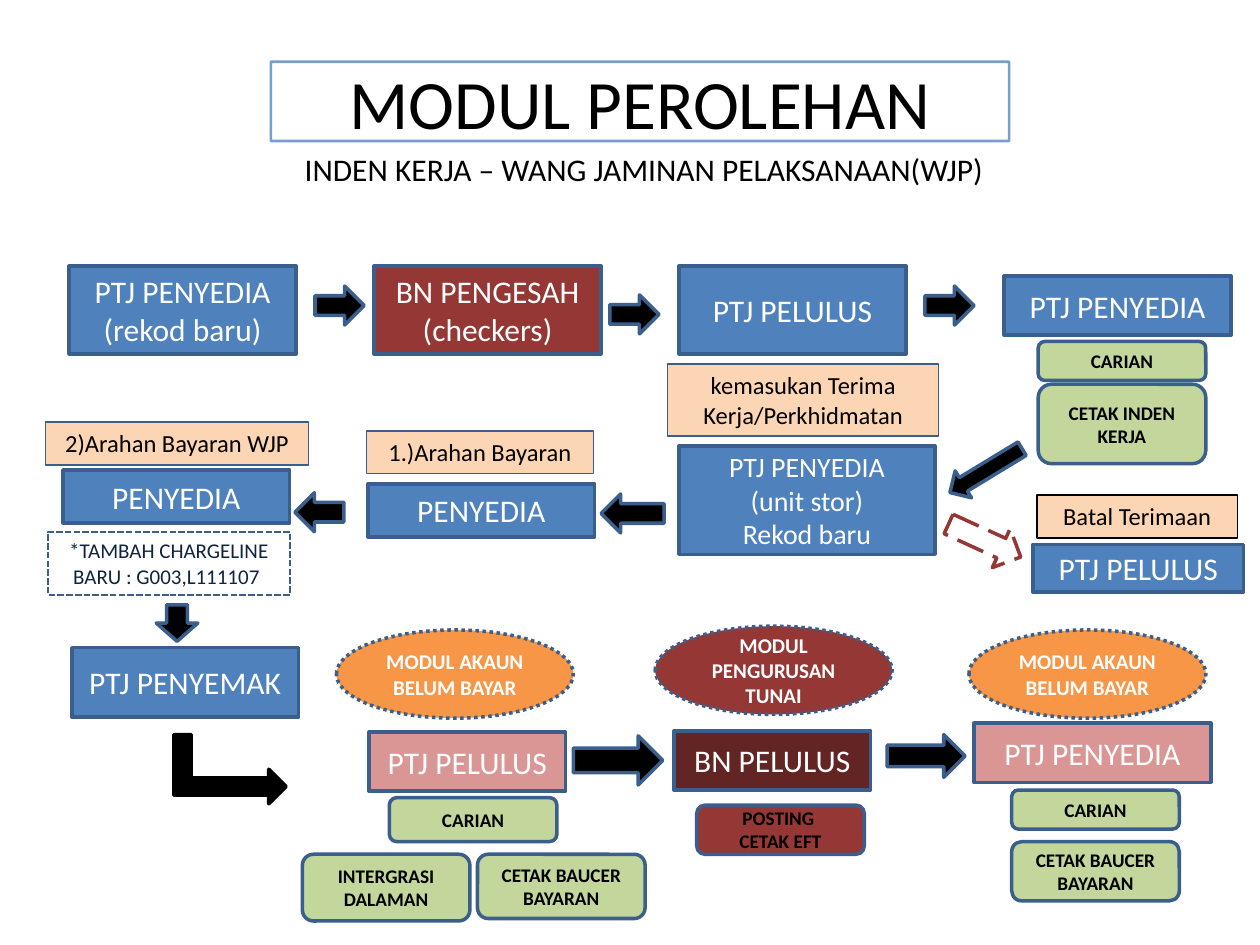
from lxml import etree
from pptx import Presentation
from pptx.dml.color import RGBColor
from pptx.enum.dml import MSO_LINE
from pptx.enum.shapes import MSO_SHAPE
from pptx.enum.text import MSO_ANCHOR, PP_ALIGN
from pptx.oxml.ns import qn
from pptx.util import Inches, Pt

BLACK = RGBColor(0x00, 0x00, 0x00)
WHITE = RGBColor(0xFF, 0xFF, 0xFF)
BLUE = RGBColor(0x4F, 0x81, 0xBD)
EDGE = RGBColor(0x3A, 0x5F, 0x8C)
NAVY = RGBColor(0x0F, 0x24, 0x3E)
RED = RGBColor(0x95, 0x37, 0x35)
MAROON = RGBColor(0x63, 0x25, 0x23)
PINK = RGBColor(0xD9, 0x96, 0x94)
GREEN = RGBColor(0xC3, 0xD6, 0x9B)
ORANGE = RGBColor(0xF7, 0x96, 0x46)
PEACH = RGBColor(0xFC, 0xD5, 0xB5)

prs = Presentation()
prs.slide_width, prs.slide_height = Inches(10), Inches(7.5)
s = prs.slides.add_slide(prs.slide_layouts[6])


def add_shape(kind, box, fill, line=EDGE, width=2, dash=None):
    sp = s.shapes.add_shape(kind, *[Inches(v) for v in box])
    sp.shadow.inherit = False
    if fill is None:
        sp.fill.background()
    else:
        sp.fill.solid()
        sp.fill.fore_color.rgb = fill
    sp.line.color.rgb = line
    sp.line.width = Pt(width)
    if dash is not None:
        sp.line.dash_style = dash
    return sp


def set_text(sp, text, size, color=WHITE, bold=False,
             anchor=MSO_ANCHOR.MIDDLE, align=PP_ALIGN.CENTER):
    tf = sp.text_frame
    tf.word_wrap = True
    tf.vertical_anchor = anchor
    tf.text = text
    for p in tf.paragraphs:
        p.alignment = align
        for r in p.runs:
            r.font.name = "Calibri"
            r.font.size = Pt(size)
            r.font.bold = bold
            r.font.color.rgb = color


# Title with a slightly transparent frame, and subtitle
title = add_shape(MSO_SHAPE.RECTANGLE, (2.15, 0.49, 5.86, 0.63), None, BLUE, 1.5)
set_text(title, "MODUL PEROLEHAN", 39.6, BLACK)
frame_color = title.line.fill._xPr.find(".//" + qn("a:srgbClr"))
etree.SubElement(frame_color, qn("a:alpha")).set("val", "76000")

subtitle = s.shapes.add_textbox(Inches(2.32), Inches(1.14), Inches(5.86), Inches(0.4))
set_text(subtitle, "INDEN KERJA – WANG JAMINAN PELAKSANAAN(WJP)", 18, BLACK,
         anchor=MSO_ANCHOR.TOP, align=PP_ALIGN.LEFT)

# Process steps
steps = [
    ("PTJ PENYEDIA\n(rekod baru)", (0.55, 2.11, 1.8, 0.7), BLUE, 18),
    ("BN PENGESAH\n(checkers)", (2.97, 2.11, 1.8, 0.7), RED, 18),
    ("PTJ PELULUS", (5.39, 2.11, 1.8, 0.7), BLUE, 18),
    ("PTJ PENYEDIA", (7.97, 2.19, 1.8, 0.47), BLUE, 18),
    ("PTJ PENYEDIA\n(unit stor)\nRekod baru", (5.39, 3.54, 2.03, 0.86), BLUE, 16),
    ("PENYEDIA", (2.92, 3.84, 1.8, 0.42), BLUE, 18),
    ("PENYEDIA", (0.5, 3.73, 1.8, 0.42), BLUE, 18),
    ("PTJ PELULUS", (8.2, 4.32, 1.67, 0.38), BLUE, 18),
    ("PTJ PENYEMAK", (0.57, 5.14, 1.8, 0.55), BLUE, 18),
    ("PTJ PELULUS", (2.93, 5.81, 1.56, 0.47), PINK, 18),
    ("BN PELULUS", (5.35, 5.8, 1.56, 0.47), MAROON, 18),
    ("PTJ PENYEDIA", (7.73, 5.74, 1.88, 0.47), PINK, 18),
]
for text, box, fill, size in steps:
    set_text(add_shape(MSO_SHAPE.RECTANGLE, box, fill), text, size)

# Module ellipses
modules = [
    ("MODUL AKAUN BELUM BAYAR", 2.67, 5, ORANGE),
    ("MODUL PENGURUSAN TUNAI", 5.2, 4.97, RED),
    ("MODUL AKAUN BELUM BAYAR", 7.69, 5, ORANGE),
]
for text, x, y, fill in modules:
    sp = add_shape(MSO_SHAPE.OVAL, (x, y, 1.88, 0.7), fill, dash=MSO_LINE.ROUND_DOT)
    set_text(sp, text, 12, bold=True)

# Action buttons, all of one width
buttons = [
    ("CETAK INDEN KERJA", 8.24, 3.05, 0.63, GREEN),
    ("CARIAN", 8.24, 2.71, 0.31, GREEN),
    ("CARIAN", 3.09, 6.33, 0.35, GREEN),
    ("INTERGRASI DALAMAN", 2.4, 6.78, 0.53, GREEN),
    ("CETAK BAUCER BAYARAN", 3.79, 6.78, 0.51, GREEN),
    ("POSTING \nCETAK EFT", 5.53, 6.39, 0.39, RED),
    ("CARIAN", 8.03, 6.27, 0.31, GREEN),
    ("CETAK BAUCER BAYARAN", 8.03, 6.68, 0.47, GREEN),
]
for text, x, y, height, fill in buttons:
    sp = add_shape(MSO_SHAPE.ROUNDED_RECTANGLE, (x, y, 1.33, height), fill)
    set_text(sp, text, 11, BLACK, bold=True)

# Peach labels
labels = [
    ("kemasukan Terima Kerja/Perkhidmatan", (5.3, 2.89, 2.15, 0.57), EDGE),
    ("1.)Arahan Bayaran", (2.91, 3.42, 1.8, 0.34), EDGE),
    ("2)Arahan Bayaran WJP", (0.36, 3.35, 2.09, 0.34), EDGE),
    ("Batal Terimaan", (8.23, 3.93, 1.59, 0.34), BLACK),
]
for text, box, line in labels:
    sp = add_shape(MSO_SHAPE.RECTANGLE, box, PEACH, line, 0.75)
    set_text(sp, text, 14, BLACK, anchor=MSO_ANCHOR.TOP)

# Dashed charge line note
note = add_shape(MSO_SHAPE.RECTANGLE, (0.38, 4.22, 1.92, 0.5), None, EDGE, 1.25)
note.line.dash_style = MSO_LINE.DASH
note.line.fill._xPr.find(qn("a:prstDash")).set("val", "sysDash")
set_text(note, "*TAMBAH CHARGELINE BARU : G003,L111107 ", 12, NAVY, anchor=MSO_ANCHOR.TOP)

# Flow arrows: box and rotation
arrows = [
    ((2.5, 2.27, 0.39, 0.31), 0),
    ((4.84, 2.34, 0.39, 0.31), 0),
    ((7.34, 2.27, 0.39, 0.31), 0),
    ((7.49, 3.61, 0.67, 0.25), 148.7),
    ((4.77, 3.92, 0.5, 0.31), 180),
    ((2.34, 3.91, 0.39, 0.31), 180),
    ((1.26, 4.78, 0.29, 0.33), 90),
    ((4.55, 5.84, 0.71, 0.39), 0),
    ((7.04, 5.83, 0.62, 0.34), 0),
]
for box, rotation in arrows:
    add_shape(MSO_SHAPE.RIGHT_ARROW, box, BLACK).rotation = rotation

# Cancellation arrow and the bend into the last row
cancel = add_shape(MSO_SHAPE.RIGHT_ARROW, (7.5, 4.12, 0.63, 0.34), None, RED,
                   dash=MSO_LINE.LONG_DASH)
cancel.rotation = 24.6
bend = add_shape(MSO_SHAPE.BENT_UP_ARROW, (1.55, 5.66, 0.55, 0.89), BLACK, BLACK)
bend.rotation = 90

prs.save("out.pptx")
